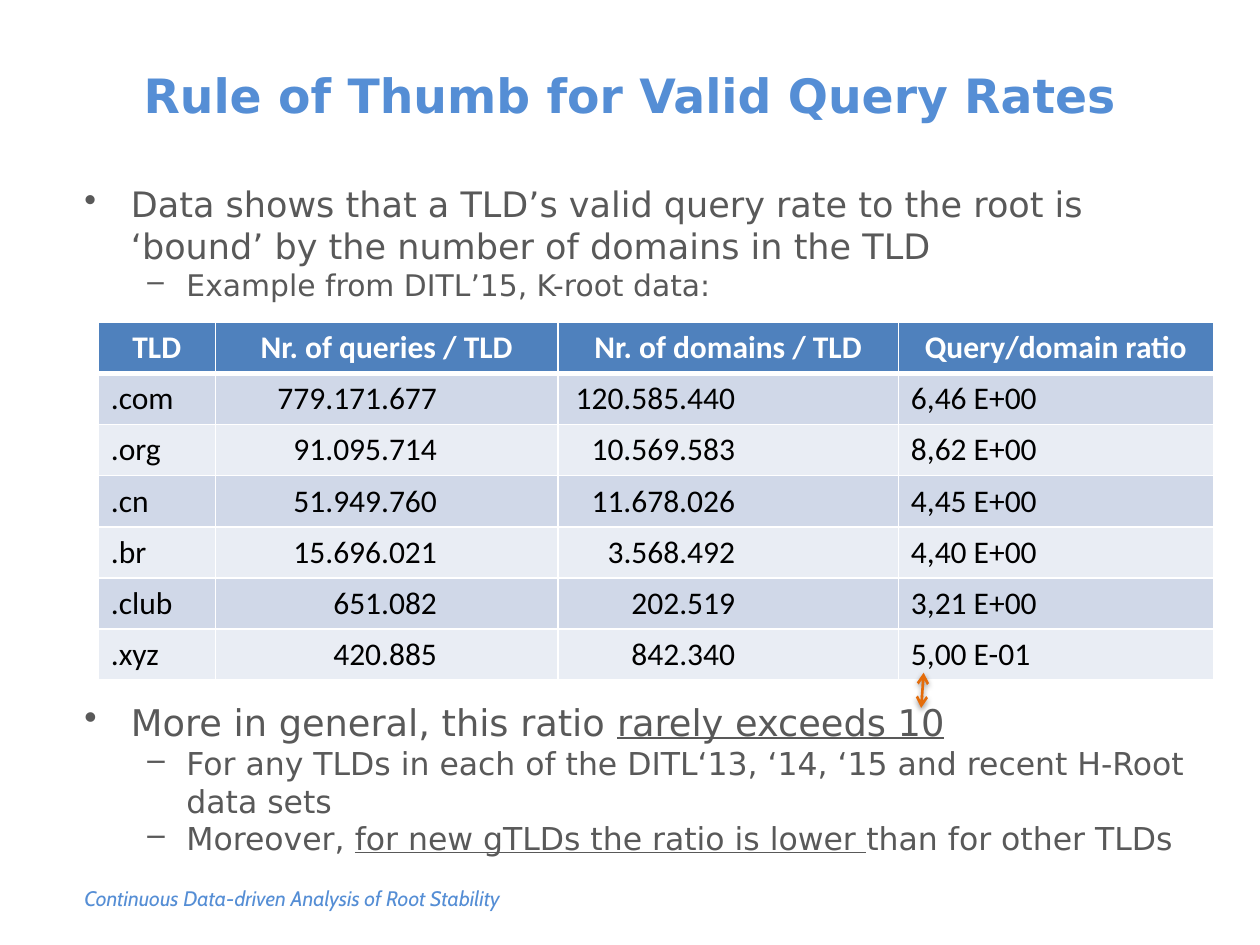
"""Build the slide on valid query rates per top-level domain."""
from lxml.etree import SubElement
from pptx import Presentation
from pptx.dml.color import RGBColor
from pptx.enum.shapes import MSO_CONNECTOR as CONN
from pptx.enum.text import MSO_ANCHOR as ANCHOR, PP_ALIGN as ALIGN
from pptx.oxml.ns import qn
from pptx.util import Cm, Pt

BLUE = RGBColor(0x55, 0x8E, 0xD5)
GREY = RGBColor(0x59, 0x59, 0x59)
WHITE = RGBColor(0xFF, 0xFF, 0xFF)
BLACK = RGBColor(0, 0, 0)
HEADER = RGBColor(0x4F, 0x81, 0xBD)
BANDS = RGBColor(0xD0, 0xD8, 0xE8), RGBColor(0xE9, 0xED, 0xF4)
ORANGE = RGBColor(0xE4, 0x6C, 0x0A)

TITLE = {"name": "DejaVu Sans", "size": Pt(27), "bold": True}
FOOTER = {"name": "Cabin", "size": Pt(12), "italic": True}
BODY = {"name": "DejaVu Sans"}
CELL = {"name": "Calibri", "size": Pt(18)}

LEVELS = [("•", 0.94, 0.94), ("–", 2.06, 0.79)]
INTRO = [
    (0, 20, ["Data shows that a TLD’s valid query rate to the root is "
             "‘bound’ by the number of domains in the TLD"]),
    (1, 17, ["Example from DITL’15, K-root data:"]),
]
FINDINGS = [
    (0, 21, ["More in general, this ratio ", "rarely exceeds 10"]),
    (1, 18, ["For any TLDs in each of the DITL‘13, ‘14, ‘15 and recent "
             "H-Root data sets"]),
    (1, 18, ["Moreover, ", "for new gTLDs the ratio is lower ",
             "than for other TLDs"]),
]
ROWS = [
    ("TLD", "Nr. of queries / TLD", "Nr. of domains / TLD",
     "Query/domain ratio"),
    (".com", "779.171.677", "120.585.440", "6,46 E+00"),
    (".org", "91.095.714", "10.569.583", "8,62 E+00"),
    (".cn", "51.949.760", "11.678.026", "4,45 E+00"),
    (".br", "15.696.021", "3.568.492", "4,40 E+00"),
    (".club", "651.082", "202.519", "3,21 E+00"),
    (".xyz", "420.885", "842.340", "5,00 E-01"),
]
COL_WIDTHS = [2.36, 6.91, 6.86, 6.35]
NUMBER_MARGINS = {1: 2.44, 2: 3.29}
ROW_HEIGHT = 1.03


def set_font(font, color, fmt):
    for key, value in fmt.items():
        setattr(font, key, value)
    font.color.rgb = color


def add_box(s, left, top, width, height, wrap=True):
    tf = s.shapes.add_textbox(Cm(left), Cm(top), Cm(width), Cm(height)).text_frame
    tf.word_wrap = wrap
    return tf


def add_line(p, text, color, fmt):
    r = p.add_run()
    r.text = text
    set_font(r.font, color, fmt)
    return r


def add_bullets(tf, items):
    for i, (level, size, parts) in enumerate(items):
        p = tf.add_paragraph() if i else tf.paragraphs[0]
        p.level = level
        char, indent, hanging = LEVELS[level]
        pPr = p._p.get_or_add_pPr()
        pPr.set("marL", str(Cm(indent)))
        pPr.set("indent", str(-Cm(hanging)))
        SubElement(pPr, qn("a:buChar"), char=char)
        for n, part in enumerate(parts):
            r = add_line(p, part, GREY, {**BODY, "size": Pt(size)})
            r.font.underline = n % 2 == 1


def set_borders(cell, bottom):
    tcPr = cell._tc.get_or_add_tcPr()
    for n, side in enumerate(("lnL", "lnR", "lnT", "lnB")):
        width = Pt(bottom if side == "lnB" else 1)
        ln = tcPr.makeelement(qn("a:" + side), {"w": str(width)})
        fill = SubElement(ln, qn("a:solidFill"))
        SubElement(fill, qn("a:srgbClr"), val=str(WHITE))
        tcPr.insert(n, ln)


def fill_cell(cell, text, row, col):
    head = row == 0
    cell.fill.solid()
    cell.fill.fore_color.rgb = HEADER if head else BANDS[(row - 1) % 2]
    set_borders(cell, 3 if head else 1)
    p = cell.text_frame.paragraphs[0]
    if head:
        p.alignment = ALIGN.CENTER
    elif col in NUMBER_MARGINS:
        p.alignment = ALIGN.RIGHT
        cell.margin_right = Cm(NUMBER_MARGINS[col])
    add_line(p, text, WHITE if head else BLACK, {**CELL, "bold": head})


def add_rate_table(s, left, top):
    tbl = s.shapes.add_table(
        len(ROWS), len(COL_WIDTHS), Cm(left), Cm(top),
        Cm(sum(COL_WIDTHS)), Cm(ROW_HEIGHT * len(ROWS))).table
    for column, width in zip(tbl.columns, COL_WIDTHS):
        column.width = Cm(width)
    for i, values in enumerate(ROWS):
        tbl.rows[i].height = Cm(ROW_HEIGHT)
        for j, text in enumerate(values):
            fill_cell(tbl.cell(i, j), text, i, j)


def add_double_arrow(s, x1, y1, x2, y2):
    c = s.shapes.add_connector(CONN.STRAIGHT, Cm(x1), Cm(y1), Cm(x2), Cm(y2))
    c.line.color.rgb = ORANGE
    c.line.width = Pt(1.5)
    ln = c.line._get_or_add_ln()
    for end in ("a:headEnd", "a:tailEnd"):
        SubElement(ln, qn(end), type="arrow")
    effects = SubElement(c._element.spPr, qn("a:effectLst"))
    shadow = SubElement(effects, qn("a:outerShdw"), blurRad=str(Pt(3.1)),
                        dist=str(Pt(1.6)), dir="5400000", rotWithShape="0")
    color = SubElement(shadow, qn("a:srgbClr"), val=str(BLACK))
    SubElement(color, qn("a:alpha"), val="38000")


def main():
    prs = Presentation()
    prs.slide_width, prs.slide_height = Cm(25.4), Cm(19.05)
    s = prs.slides.add_slide(prs.slide_layouts[6])

    footer = add_box(s, 1.45, 17.73, 9.17, 0.76, wrap=False)
    add_line(footer.paragraphs[0],
             "Continuous Data-driven Analysis of Root Stability", BLUE, FOOTER)

    title = add_box(s, 1.45, 0.76, 22.48, 2.31)
    title.vertical_anchor = ANCHOR.MIDDLE
    title.paragraphs[0].alignment = ALIGN.CENTER
    add_line(title.paragraphs[0], "Rule of Thumb for Valid Query Rates",
             BLUE, TITLE)

    add_bullets(add_box(s, 1.45, 3.56, 23.42, 2.8), INTRO)
    add_bullets(add_box(s, 1.45, 13.98, 23.42, 3.4), FINDINGS)
    add_rate_table(s, 1.98, 6.5)
    add_double_arrow(s, 18.62, 13.56, 18.57, 14.27)
    prs.save("out.pptx")


if __name__ == "__main__":
    main()
